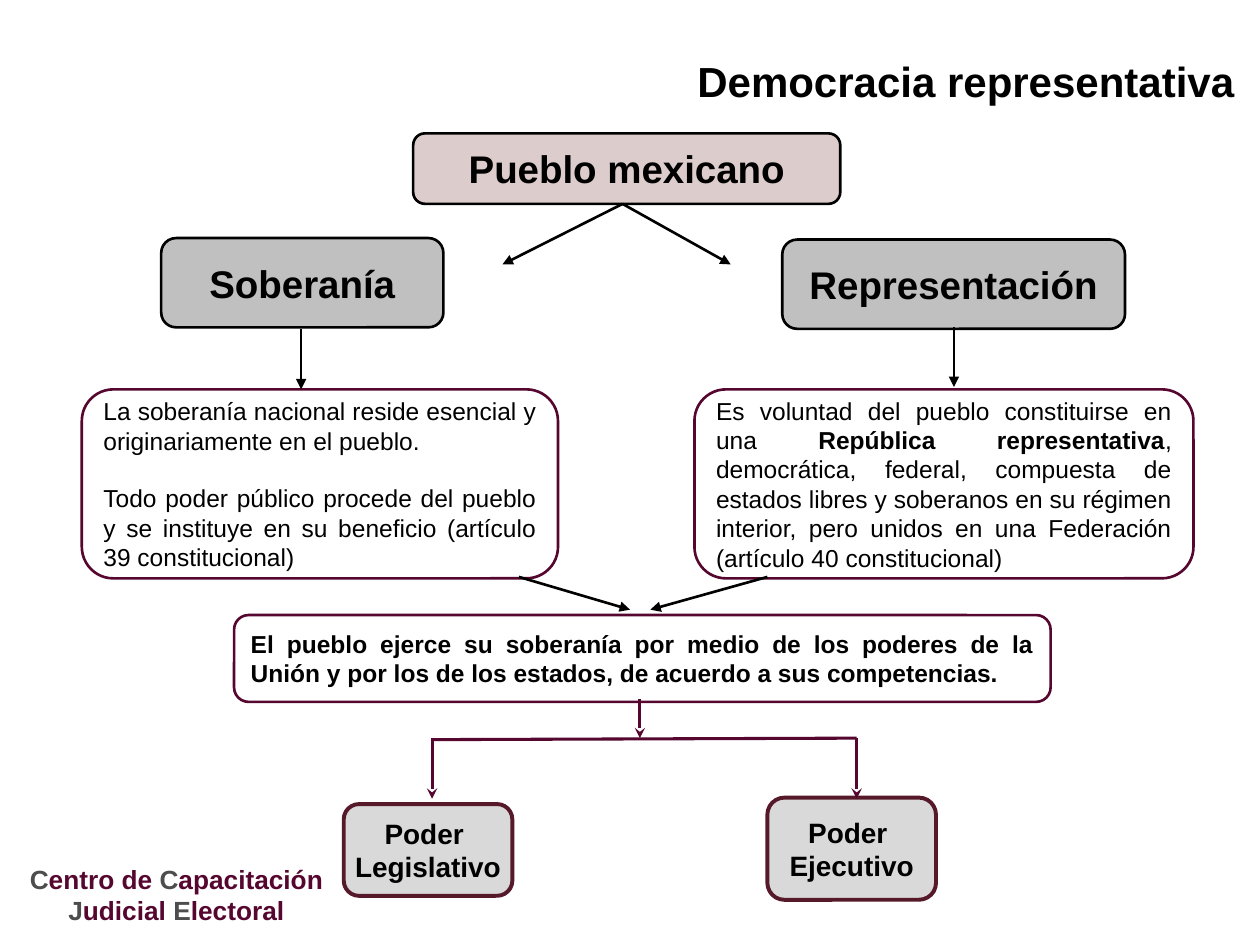
from dataclasses import dataclass

from lxml import etree
from pptx import Presentation
from pptx import util as u
from pptx.dml.color import RGBColor
from pptx.enum import shapes, text
from pptx.oxml.ns import qn

BLACK, WINE, GREY = "000000", "56072F", "4D4D4D"
CENTER, JUSTIFY = text.PP_ALIGN.CENTER, text.PP_ALIGN.JUSTIFY


@dataclass
class Box:
    """Rounded box; each paragraph is a list of (text, bold) runs. Lengths in cm."""
    x: float
    y: float
    w: float
    h: float
    paragraphs: list
    size: int = 14
    line: str = WINE
    width: float = 1.5
    fill: str = ""
    alpha: int = 100
    align: int = JUSTIFY
    wrap: bool = True
    gap: int = 0


@dataclass
class Line:
    """Straight line between two points in cm."""
    x1: float
    y1: float
    x2: float
    y2: float
    color: str = BLACK
    width: float = 1.5
    head: str = "triangle"


def rgb(value: str) -> RGBColor:
    return RGBColor.from_string(value)


def add_run(p, content: str, *, size: float, color: str = BLACK, bold: bool = False):
    r = p.add_run()
    r.text = content
    r.font.name = "Arial"
    r.font.size = u.Pt(size)
    r.font.bold = bold
    r.font.color.rgb = rgb(color)


def next_paragraph(tf, i: int, align):
    p = tf.add_paragraph() if i else tf.paragraphs[0]
    p.alignment = align
    return p


def add_textbox(s, x: float, y: float, w: float, h: float):
    return s.shapes.add_textbox(u.Cm(x), u.Cm(y), u.Cm(w), u.Cm(h)).text_frame


def draw_box(s, b: Box) -> None:
    sp = s.shapes.add_shape(shapes.MSO_SHAPE.ROUNDED_RECTANGLE,
                            u.Cm(b.x), u.Cm(b.y), u.Cm(b.w), u.Cm(b.h))
    sp.shadow.inherit = False
    sp.line.color.rgb = rgb(b.line)
    sp.line.width = u.Pt(b.width)
    if b.fill:
        sp.fill.solid()
        sp.fill.fore_color.rgb = rgb(b.fill)
    else:
        sp.fill.background()
    if b.alpha < 100:
        clr = sp._element.spPr.find(qn("a:solidFill"))[0]
        etree.SubElement(clr, qn("a:alpha"), val=str(b.alpha * 1000))
    tf = sp.text_frame
    tf.word_wrap = b.wrap
    tf.vertical_anchor = text.MSO_ANCHOR.MIDDLE
    for i, runs in enumerate(b.paragraphs):
        p = next_paragraph(tf, i, b.align)
        if i and b.gap:
            p.space_before = u.Pt(b.gap)
        for content, bold in runs:
            add_run(p, content, size=b.size, bold=bold)


def draw_line(s, ln: Line) -> None:
    c = s.shapes.add_connector(shapes.MSO_CONNECTOR.STRAIGHT, u.Cm(ln.x1), u.Cm(ln.y1),
                               u.Cm(ln.x2), u.Cm(ln.y2))
    c.line.color.rgb = rgb(ln.color)
    c.line.width = u.Pt(ln.width)
    spPr = c._element.spPr
    if ln.head:
        etree.SubElement(spPr.find(qn("a:ln")), qn("a:tailEnd"), type=ln.head)
    etree.SubElement(spPr, qn("a:effectLst"))


def heading(x, y, w, h, label, fill, alpha=100) -> Box:
    return Box(x, y, w, h, [[(label, True)]], size=22, line=BLACK, fill=fill,
               alpha=alpha, align=CENTER, wrap=False)


def power(x, y, h, name) -> Box:
    return Box(x, y, 3.4, h, [[("Poder ", True)], [(name, True)]], size=16,
               line="561929", width=2.25, fill="D9D9D9", align=CENTER, wrap=False)


BOXES = [
    Box(4.72, 12.4, 16.46, 1.75, [[
        ("El pueblo ejerce su soberanía por medio de los poderes de la Unión y por los "
         "de los estados, de acuerdo a sus competencias.", True)]]),
    Box(1.65, 7.85, 9.6, 3.81, [
        [("La soberanía nacional reside esencial y originariamente en el pueblo.", False)],
        [("Todo poder público procede del pueblo y se instituye en su beneficio "
          "(artículo 39 constitucional)", False)]], gap=16),
    heading(8.33, 2.69, 8.61, 1.42, "Pueblo mexicano", "580000", 20),
    heading(3.25, 4.8, 5.69, 1.8, "Soberanía", "C0C0C0"),
    heading(15.77, 4.83, 6.91, 1.8, "Representación", "C0C0C0"),
    Box(14, 7.85, 10.06, 3.81, [[
        ("Es voluntad del pueblo constituirse en una ", False),
        ("República representativa", True),
        (", democrática, federal, compuesta de estados libres y soberanos en su régimen "
         "interior, pero unidos en una Federación (artículo 40 constitucional)", False)]]),
    power(15.47, 16.08, 2.06, "Ejecutivo"),
    power(6.93, 16.21, 1.85, "Legislativo"),
]

LINES = [
    # From the people to its two attributes
    Line(12.55, 4.11, 10.13, 5.33),
    Line(12.55, 4.11, 14.73, 5.33),
    # From each attribute to its article, then to the shared statement
    Line(6.07, 6.63, 6.07, 7.85),
    Line(19.23, 6.6, 19.23, 7.8),
    Line(15.47, 11.63, 13.11, 12.29),
    Line(10.46, 11.63, 12.7, 12.29),
    # Branching to the powers
    Line(8.74, 14.91, 17.27, 14.88, WINE, 1.75, ""),
    Line(8.71, 14.88, 8.71, 16.1, WINE, 1.75, "stealth"),
    Line(12.9, 14.1, 12.9, 14.88, WINE, 1.75, "stealth"),
    Line(17.27, 14.88, 17.27, 16.1, WINE, 1.75, "stealth"),
]

FOOTER = [
    [("C", GREY), ("entro de ", "560730"), ("C", GREY), ("apacitación", "560730")],
    [("J", GREY), ("udicial ", "560730"), ("E", GREY), ("lectoral", "560730")],
]


def main() -> None:
    prs = Presentation()
    prs.slide_width, prs.slide_height = u.Cm(25.4), u.Cm(19.05)
    s = prs.slides.add_slide(prs.slide_layouts[6])

    # Institution name
    tf = add_textbox(s, 0.23, 16.74, 6.65, 1.57)
    tf.word_wrap = True
    tf.margin_top, tf.margin_bottom = u.Cm(0.71), 0
    for i, runs in enumerate(FOOTER):
        p = next_paragraph(tf, i, CENTER)
        p.line_spacing = 0.96
        for content, color in runs:
            add_run(p, content, size=15, color=color, bold=True)

    # Title
    tf = add_textbox(s, 13.74, 0.99, 11.46, 1.3)
    tf.word_wrap = False
    add_run(next_paragraph(tf, 0, CENTER), "Democracia representativa", size=24, bold=True)

    # Diagram
    for b in BOXES:
        draw_box(s, b)
    for ln in LINES:
        draw_line(s, ln)

    prs.save("out.pptx")


if __name__ == "__main__":
    main()
